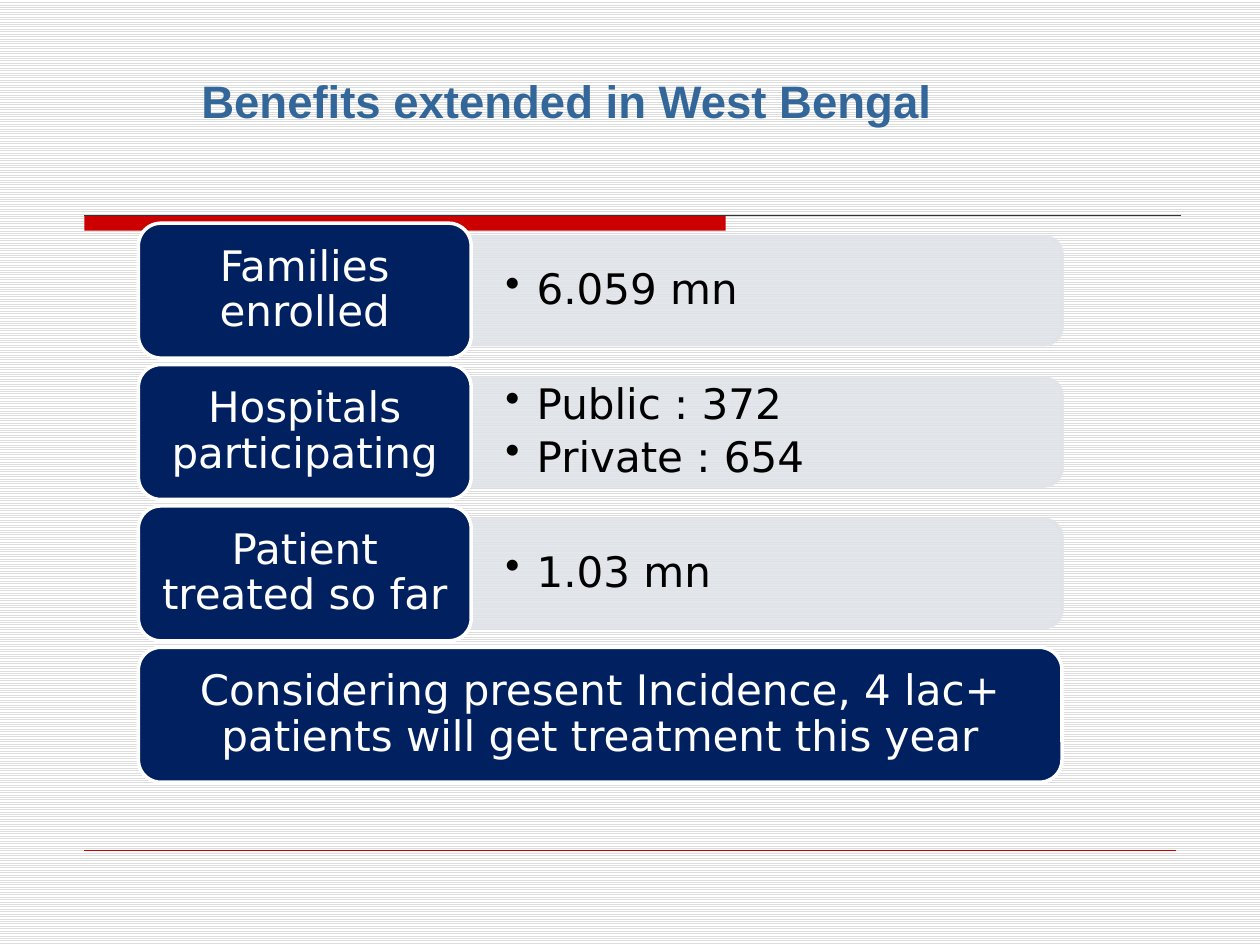
from lxml import etree
from pptx import Presentation
from pptx.dml.color import RGBColor
from pptx.enum import dml, shapes, text
from pptx.oxml import ns
from pptx.util import Cm, Pt

COLOURS = {
    "title": "336699", "accent": "CC0000", "rule": "333333",
    "navy": "002060", "panel": "E0E4E9", "white": "FFFFFF",
    "black": "000000", "stripe": "DDDDDD",
}
ROWS = [
    ("Families enrolled", ["6.059 mn"]),
    ("Hospitals participating", ["Public : 372", "Private : 654"]),
    ("Patient treated so far", ["1.03 mn"]),
]
SUMMARY = "Considering present Incidence, 4 lac+ patients will get treatment this year"
LEFT, TOP, PITCH = 2.79, 4.5, 2.85
LABEL_WIDTH, LABEL_HEIGHT, SUMMARY_WIDTH = 6.71, 2.72, 18.62
PANEL_WIDTH, PANEL_HEIGHT = 11.91, 2.18


def colour(name):
    return RGBColor.from_string(COLOURS[name])


def apply(target, values):
    for name, value in values.items():
        setattr(target, name, value)


class SlideStyle:
    body = {"name": "DejaVu Sans", "size": Pt(24)}
    heading = {"name": "Arial", "size": Pt(26), "bold": True}
    centred = {"alignment": text.PP_ALIGN.CENTER, "line_spacing": 0.9}
    listed = {"alignment": text.PP_ALIGN.LEFT, "line_spacing": 0.9, "space_after": Pt(4.2)}
    frame = {"word_wrap": True, "vertical_anchor": text.MSO_ANCHOR.MIDDLE}
    padding = {"margin_left": Cm(0.69), "margin_right": Cm(0.69),
               "margin_top": Cm(0.36), "margin_bottom": Cm(0.36)}

    def __init__(self, slide):
        self.slide = slide

    def background(self):
        fill = self.slide.background.fill
        fill.patterned()
        fill.pattern = dml.MSO_PATTERN.LIGHT_HORIZONTAL
        fill.fore_color.rgb = colour("stripe")
        fill.back_color.rgb = colour("white")

    def box(self, kind, left, top, width, height, fill, line=None):
        shape = self.slide.shapes.add_shape(kind, Cm(left), Cm(top), Cm(width), Cm(height))
        shape.shadow.inherit = False
        shape.fill.solid()
        shape.fill.fore_color.rgb = colour(fill)
        if line:
            shape.line.color.rgb = colour(line)
            shape.line.width = Pt(2)
        else:
            shape.line.fill.background()
        return shape

    def rule(self, left, right, top, name, width):
        connector = self.slide.shapes.add_connector(
            shapes.MSO_CONNECTOR.STRAIGHT, Cm(left), Cm(top), Cm(right), Cm(top))
        connector.line.color.rgb = colour(name)
        connector.line.width = Pt(width)
        etree.SubElement(connector._element.spPr, ns.qn("a:effectLst"))

    def fill_text(self, shape, lines, font, name, paragraph_format, bullets=False):
        frame = shape.text_frame
        apply(frame, self.frame)
        for index, line in enumerate(lines):
            paragraph = frame.add_paragraph() if index else frame.paragraphs[0]
            apply(paragraph, paragraph_format)
            if bullets:
                properties = paragraph._p.get_or_add_pPr()
                properties.set("marL", str(Cm(0.63)))
                properties.set("indent", str(-Cm(0.63)))
                etree.SubElement(properties, ns.qn("a:buChar"), char="•")
            run = paragraph.add_run()
            run.text = line
            apply(run.font, font)
            run.font.color.rgb = colour(name)

    def text_box(self, left, top, width, height):
        return self.slide.shapes.add_textbox(Cm(left), Cm(top), Cm(width), Cm(height))

    def title(self, words):
        self.fill_text(self.text_box(3.81, 0.43, 16.94, 3.18), [words], self.heading,
                       "title", {"alignment": text.PP_ALIGN.LEFT})

    def label(self, words, top, width):
        shape = self.box(shapes.MSO_SHAPE.ROUNDED_RECTANGLE, LEFT, top, width,
                         LABEL_HEIGHT, "navy", "white")
        self.fill_text(shape, [words], self.body, "white", self.centred)

    def panel(self, lines, top):
        left = LEFT + LABEL_WIDTH
        middle = top + LABEL_HEIGHT / 2
        shape = self.box(shapes.MSO_SHAPE.ROUND_2_SAME_RECTANGLE,
                         left + (PANEL_WIDTH - PANEL_HEIGHT) / 2, middle - PANEL_WIDTH / 2,
                         PANEL_HEIGHT, PANEL_WIDTH, "panel", "panel")
        shape.rotation = 90
        for element in shape._element.spPr.iter(ns.qn("a:srgbClr")):
            etree.SubElement(element, ns.qn("a:alpha"), val="90000")
        height = 1.96
        box = self.text_box(left, middle - height / 2, 11.81, height)
        apply(box.text_frame, self.padding)
        self.fill_text(box, lines, self.body, "black", self.listed, bullets=True)


def main():
    presentation = Presentation()
    apply(presentation, {"slide_width": Cm(25.4), "slide_height": Cm(19.05)})
    style = SlideStyle(presentation.slides.add_slide(presentation.slide_layouts[6]))
    style.background()
    style.box(shapes.MSO_SHAPE.RECTANGLE, 1.7, 4.34, 12.93, 0.31, "accent")
    style.rule(1.7, 23.8, 4.34, "rule", 0.75)
    style.rule(1.7, 23.7, 17.14, "accent", 0.25)
    style.title("Benefits extended in West Bengal")
    for index, (label, lines) in enumerate(ROWS):
        top = TOP + index * PITCH
        style.panel(lines, top)
        style.label(label, top, LABEL_WIDTH)
    style.label(SUMMARY, TOP + len(ROWS) * PITCH, SUMMARY_WIDTH)
    presentation.save("out.pptx")


if __name__ == "__main__":
    main()
